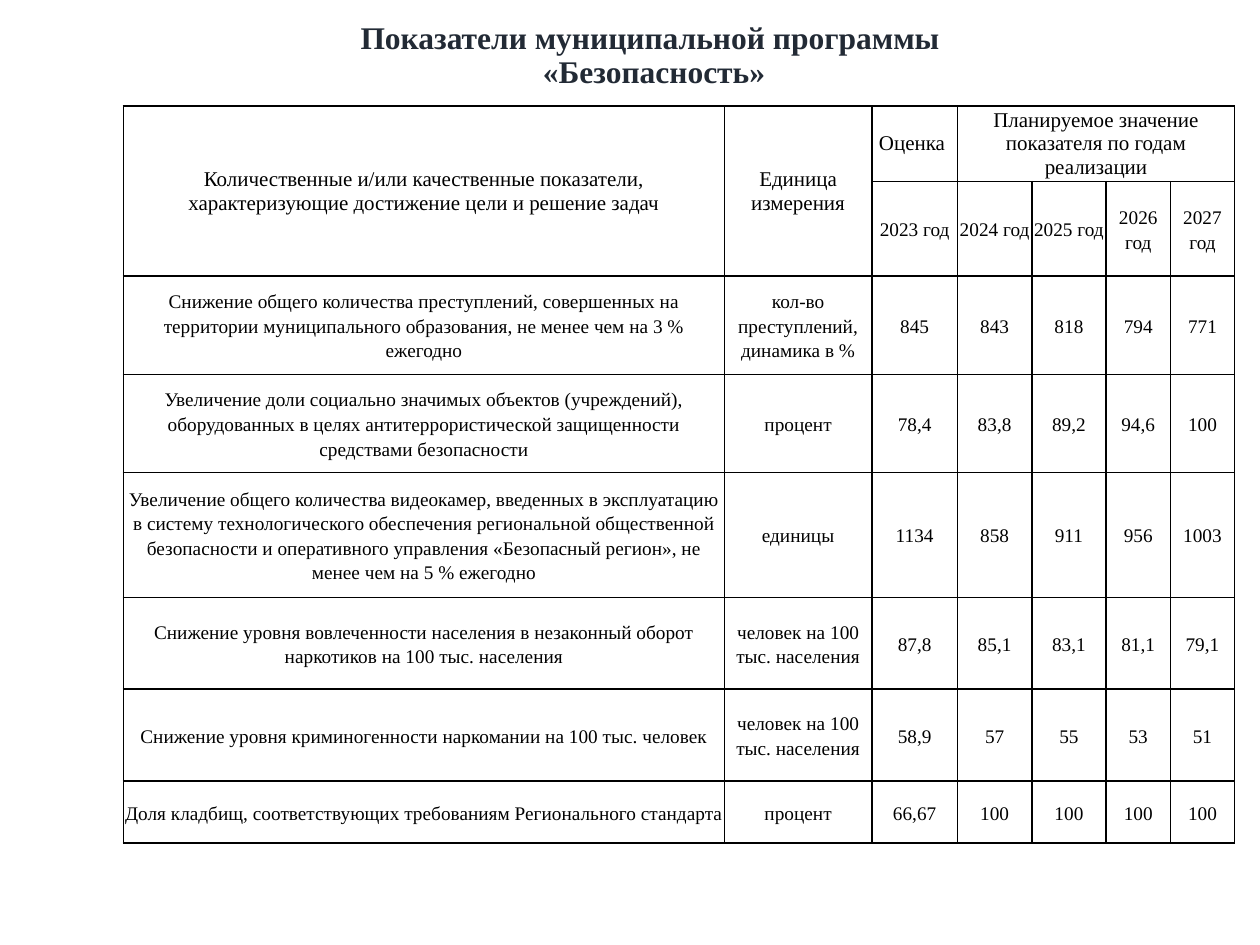
"""Build the slide with the indicators of the municipal safety programme."""
from dataclasses import dataclass

import pptx
import pptx.dml.color
import pptx.enum.text
import pptx.oxml
import pptx.oxml.ns
import pptx.table
import pptx.text.text
import pptx.util

Inches = pptx.util.Inches
FONT = "Times New Roman"
BLACK = "000000"
COLUMN_WIDTHS = [4.77, 1.17, 0.68, 0.59, 0.59, 0.51, 0.51]
HEADER_HEIGHTS = [0.56, 0.75]
YEARS = range(2023, 2028)


@dataclass
class Indicator:
    name: str
    unit: str
    values: list[str]
    height: float


@dataclass
class HeaderCell:
    text: str
    column: int
    row_span: int = 1
    column_span: int = 1
    top_margin: float = 0


HEADERS = [
    HeaderCell("Количественные и/или качественные показатели, характеризующие "
               "достижение цели и решение задач", 0, row_span=2, top_margin=0.01),
    HeaderCell("Единица измерения", 1, row_span=2, top_margin=0.01),
    HeaderCell("Оценка ", 2),
    HeaderCell("Планируемое значение показателя по годам реализации", 3, column_span=4),
]

INDICATORS = [
    Indicator("Снижение общего количества преступлений, совершенных на территории "
              "муниципального образования, не менее чем на 3 % ежегодно",
              "кол-во\nпреступлений,\nдинамика в %",
              ["845", "843", "818", "794", "771"], 0.78),
    Indicator("Увеличение доли социально значимых объектов (учреждений), оборудованных "
              "в целях антитеррористической защищенности средствами безопасности",
              "процент", ["78,4", "83,8", "89,2", "94,6", "100"], 0.78),
    Indicator("Увеличение общего количества видеокамер, введенных в эксплуатацию в систему "
              "технологического обеспечения региональной общественной безопасности и "
              "оперативного управления «Безопасный регион», не менее чем на 5 % ежегодно",
              "единицы", ["1134", "858", "911", "956", "1003"], 0.99),
    Indicator("Снижение уровня вовлеченности населения в незаконный оборот наркотиков "
              "на 100 тыс. населения", "человек на 100 тыс. населения",
              ["87,8", "85,1", "83,1", "81,1", "79,1"], 0.73),
    Indicator("Снижение уровня криминогенности наркомании на 100 тыс. человек",
              "человек на 100 тыс. населения", ["58,9", "57", "55", "53", "51"], 0.73),
    Indicator("Доля кладбищ, соответствующих требованиям Регионального стандарта",
              "процент", ["66,67", "100", "100", "100", "100"], 0.49),
]


def color(value: str) -> pptx.dml.color.RGBColor:
    """Turn a hex string into a colour."""
    return pptx.dml.color.RGBColor.from_string(value)


def style_text(text_frame: pptx.text.text.TextFrame, size: float, spacing: float,
               text_color: str = BLACK, bold: bool = False) -> None:
    """Centre every paragraph and set its font."""
    for paragraph in text_frame.paragraphs:
        paragraph.alignment = pptx.enum.text.PP_ALIGN.CENTER
        paragraph.line_spacing = spacing
        paragraph.font.name = FONT
        paragraph.font.size = pptx.util.Pt(size)
        paragraph.font.bold = bold
        paragraph.font.color.rgb = color(text_color)


def frame_cell(cell: pptx.table._Cell) -> None:
    """Give a cell thin black borders and no fill."""
    properties = cell._tc.get_or_add_tcPr()
    for side in ("lnL", "lnR", "lnT", "lnB"):
        properties.append(pptx.oxml.parse_xml(
            f'<a:{side} {pptx.oxml.ns.nsdecls("a")} w="{pptx.util.Pt(1)}">'
            f'<a:solidFill><a:srgbClr val="{BLACK}"/></a:solidFill></a:{side}>'))
    cell.fill.background()


def write_cell(cell: pptx.table._Cell, text: str, size: float = 11,
               spacing: float = 1.15, top_margin: float = 0) -> None:
    """Write centred text into a cell with narrow margins."""
    cell.margin_left = cell.margin_right = Inches(0.01)
    cell.margin_top = Inches(top_margin)
    cell.margin_bottom = Inches(0)
    cell.vertical_anchor = pptx.enum.text.MSO_ANCHOR.MIDDLE
    cell.text = text
    style_text(cell.text_frame, size, spacing)


def add_title(slide: pptx.slide.Slide) -> None:
    """Add the two-line slide title."""
    title = slide.shapes.add_textbox(Inches(0.43), Inches(0.05), Inches(9.46), Inches(0.79))
    text_frame = title.text_frame
    text_frame.word_wrap = True
    text_frame.vertical_anchor = pptx.enum.text.MSO_ANCHOR.MIDDLE
    text_frame.text = "Показатели муниципальной программы\v «Безопасность»"
    style_text(text_frame, 18, 0.9, "222A35", bold=True)


def add_indicator_table(slide: pptx.slide.Slide) -> None:
    """Add the table of indicators by year."""
    heights = HEADER_HEIGHTS + [indicator.height for indicator in INDICATORS]
    table = slide.shapes.add_table(
        len(heights), len(COLUMN_WIDTHS), Inches(0.98), Inches(0.84),
        Inches(sum(COLUMN_WIDTHS)), Inches(sum(heights))).table
    table.first_row = table.horz_banding = False
    for column, width in zip(table.columns, COLUMN_WIDTHS):
        column.width = Inches(width)
    for row, height in zip(table.rows, heights):
        row.height = Inches(height)
    for cell in table.iter_cells():
        frame_cell(cell)
    for header in HEADERS:
        cell = table.cell(0, header.column)
        if header.row_span > 1 or header.column_span > 1:
            cell.merge(table.cell(header.row_span - 1, header.column + header.column_span - 1))
        write_cell(cell, header.text, 12, 1.0, header.top_margin)
    for column, year in enumerate(YEARS, 2):
        write_cell(table.cell(1, column), f"{year} год")
    for row, indicator in enumerate(INDICATORS, len(HEADER_HEIGHTS)):
        for column, text in enumerate([indicator.name, indicator.unit, *indicator.values]):
            write_cell(table.cell(row, column), text)


def main() -> None:
    """Create and save the presentation."""
    presentation = pptx.Presentation()
    presentation.slide_width = Inches(10)
    presentation.slide_height = Inches(7.5)
    slide = presentation.slides.add_slide(presentation.slide_layouts[6])
    add_title(slide)
    add_indicator_table(slide)
    presentation.save("out.pptx")


if __name__ == "__main__":
    main()
